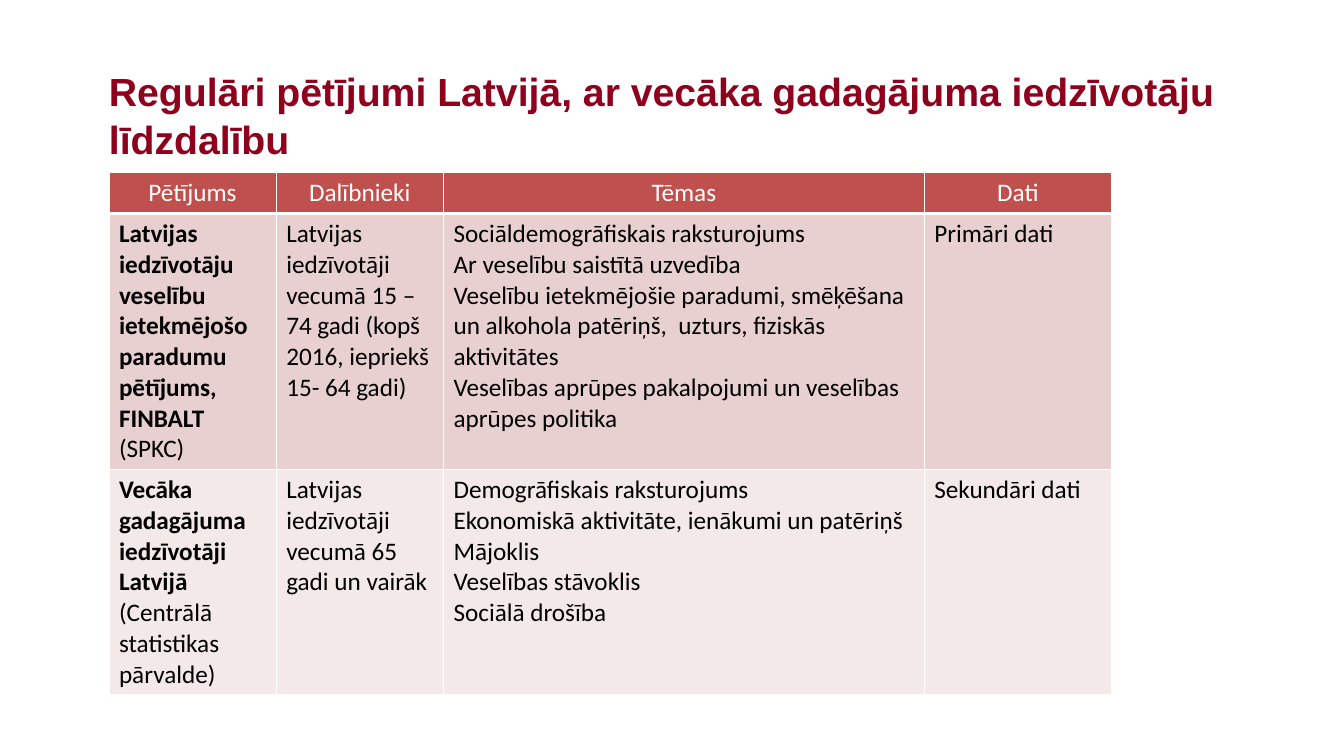
from dataclasses import dataclass

from lxml.etree import SubElement
from pptx import Presentation
from pptx.dml.color import RGBColor
from pptx.enum.text import MSO_ANCHOR, PP_ALIGN
from pptx.oxml.ns import qn
from pptx.util import Pt

# Content: a cell is a list of paragraphs, a paragraph a list of (text, bold) spans
TITLE = "Regulāri pētījumi Latvijā, ar vecāka gadagājuma iedzīvotāju līdzdalību"
HEADINGS = ["Pētījums", "Dalībnieki", "Tēmas", "Dati"]


def plain(*lines):
    return [[(line, False)] for line in lines]


STUDIES = [
    [
        [
            [("Latvijas iedzīvotāju veselību ietekmējošo", True)],
            [("paradumu pētījums, FINBALT ", True), ("(SPKC)", False)],
        ],
        plain("Latvijas iedzīvotāji vecumā 15 – 74 gadi (kopš 2016, iepriekš 15- 64 gadi)"),
        plain(
            "Sociāldemogrāfiskais raksturojums",
            "Ar veselību saistītā uzvedība",
            "Veselību ietekmējošie paradumi, smēķēšana un alkohola patēriņš,  uzturs, "
            "fiziskās aktivitātes",
            "Veselības aprūpes pakalpojumi un veselības aprūpes politika",
        ),
        plain("Primāri dati"),
    ],
    [
        [[("Vecāka gadagājuma iedzīvotāji Latvijā ", True),
          ("(Centrālā statistikas pārvalde)", False)]],
        plain("Latvijas iedzīvotāji vecumā 65 gadi un vairāk"),
        plain(
            "Demogrāfiskais raksturojums",
            "Ekonomiskā aktivitāte, ienākumi un patēriņš",
            "Mājoklis",
            "Veselības stāvoklis",
            "Sociālā drošība",
        ),
        plain("Sekundāri dati"),
    ],
]


@dataclass(frozen=True)
class Theme:
    title_font: str = "Arial"
    table_font: str = "Calibri"
    title_size: int = 28
    table_size: int = 18
    title: str = "8E001C"
    heading_text: str = "FFFFFF"
    body_text: str = "000000"
    border: str = "FFFFFF"
    row_fills: tuple = ("C0504D", "E8D0D0", "F4E9E9")


THEME = Theme()

# Layout in points
LEFT = 77.8
TITLE_BOX = (LEFT, 48.2, 804.2, 67.7)
TABLE_TOP = 123.3
COLUMN_WIDTHS = [119.5, 119.5, 343.4, 133.9]
ROW_HEIGHTS = [29.2, 183, 161]


def style(font, name, size, color, bold):
    font.name, font.size, font.bold = name, Pt(size), bold
    font.color.rgb = RGBColor.from_string(color)


def add_borders(cell, bottom_width):
    properties = cell._tc.get_or_add_tcPr()
    widths = {"a:lnL": 1, "a:lnR": 1, "a:lnT": 1, "a:lnB": bottom_width}
    for position, (side, width) in enumerate(widths.items()):
        line = SubElement(properties, qn(side), w=str(Pt(width)))
        fill = SubElement(line, qn("a:solidFill"))
        SubElement(fill, qn("a:srgbClr"), val=THEME.border)
        properties.insert(position, line)


def fill_cell(cell, paragraphs, row):
    is_heading = row == 0
    cell.fill.solid()
    cell.fill.fore_color.rgb = RGBColor.from_string(THEME.row_fills[row])
    add_borders(cell, 3 if is_heading else 1)
    color = THEME.heading_text if is_heading else THEME.body_text
    for index, spans in enumerate(paragraphs):
        frame = cell.text_frame
        para = frame.add_paragraph() if index else frame.paragraphs[0]
        para.alignment = PP_ALIGN.CENTER if is_heading else PP_ALIGN.LEFT
        for text, bold in spans:
            span = para.add_run()
            span.text = text
            style(span.font, THEME.table_font, THEME.table_size, color, bold)


def add_title(page):
    title = page.shapes.title
    title.left, title.top, title.width, title.height = map(Pt, TITLE_BOX)
    frame = title.text_frame
    frame.text = TITLE
    frame.word_wrap = True
    frame.vertical_anchor = MSO_ANCHOR.MIDDLE
    frame.margin_left = frame.margin_right = frame.margin_top = frame.margin_bottom = 0
    para = frame.paragraphs[0]
    para.alignment = PP_ALIGN.LEFT
    style(para.runs[0].font, THEME.title_font, THEME.title_size, THEME.title, True)


def add_studies(page):
    rows = [[plain(heading) for heading in HEADINGS], *STUDIES]
    table = page.shapes.add_table(
        len(rows), len(HEADINGS), Pt(LEFT), Pt(TABLE_TOP),
        Pt(sum(COLUMN_WIDTHS)), Pt(sum(ROW_HEIGHTS)),
    ).table
    for column, width in zip(table.columns, COLUMN_WIDTHS):
        column.width = Pt(width)
    for row, (contents, height) in enumerate(zip(rows, ROW_HEIGHTS)):
        table.rows[row].height = Pt(height)
        for column, paragraphs in enumerate(contents):
            fill_cell(table.cell(row, column), paragraphs, row)


def main():
    deck = Presentation()
    deck.slide_width, deck.slide_height = Pt(960), Pt(540)
    page = deck.slides.add_slide(deck.slide_layouts[5])
    add_title(page)
    add_studies(page)
    deck.save("out.pptx")


if __name__ == "__main__":
    main()
